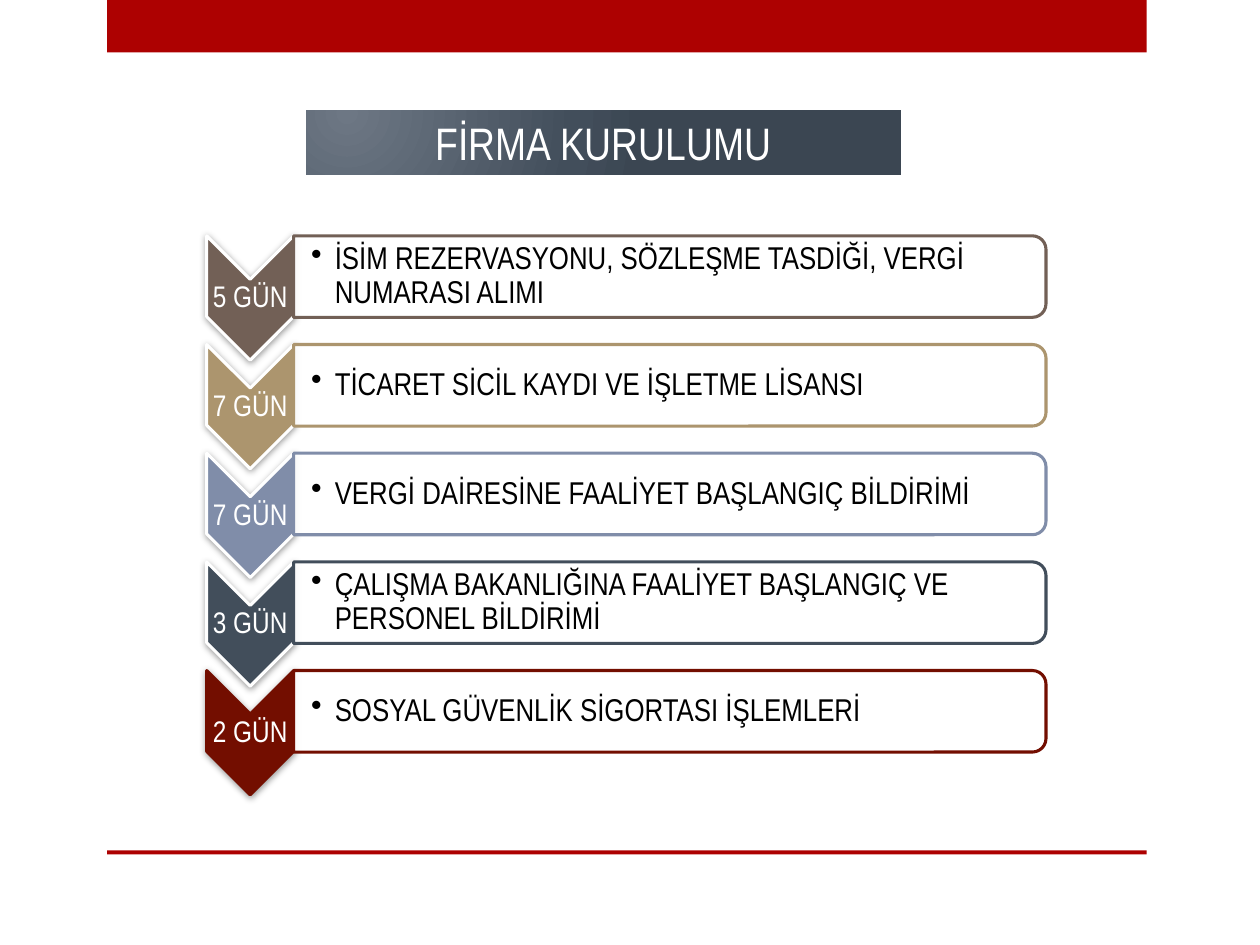
from dataclasses import dataclass

from lxml import etree
from pptx import Presentation
from pptx.dml.color import RGBColor
from pptx.enum.shapes import MSO_SHAPE
from pptx.enum.text import MSO_ANCHOR, PP_ALIGN
from pptx.oxml.ns import qn
from pptx.util import Pt

RECTANGLE = MSO_SHAPE.RECTANGLE
CHEVRON = MSO_SHAPE.CHEVRON
ROUNDED_TOP = MSO_SHAPE.ROUND_2_SAME_RECTANGLE
MIDDLE = MSO_ANCHOR.MIDDLE
LEFT, CENTER = PP_ALIGN.LEFT, PP_ALIGN.CENTER


@dataclass(frozen=True)
class Theme:
    font: str = "Arial Narrow"
    title_size: float = 26
    step_size: float = 18
    days_size: float = 17
    outline: float = 1.75
    title_outline: float = 1.25
    white: str = "FFFFFF"
    black: str = "000000"
    red: str = "AD0101"
    title_stops: tuple = ((0, "6D7784"), (76, "424E5B"), (100, "3B4652"))


THEME = Theme()

# Days, step, colour, chevron outline
STEPS = [
    ("5 GÜN", "İSİM REZERVASYONU, SÖZLEŞME TASDİĞİ, VERGİ NUMARASI ALIMI", "726056", THEME.white),
    ("7 GÜN", "TİCARET SİCİL KAYDI VE İŞLETME LİSANSI", "AC956E", THEME.white),
    ("7 GÜN", "VERGİ DAİRESİNE FAALİYET BAŞLANGIÇ BİLDİRİMİ", "808DA9", THEME.white),
    ("3 GÜN", "ÇALIŞMA BAKANLIĞINA FAALİYET BAŞLANGIÇ VE PERSONEL BİLDİRİMİ", "424E5B", THEME.white),
    ("2 GÜN", "SOSYAL GÜVENLİK SİGORTASI İŞLEMLERİ", "730E00", "730E00"),
]


def add_xml(parent, tag, **attributes):
    element = etree.SubElement(parent, qn(tag))
    for name, value in attributes.items():
        element.set(name, str(value))
    return element


def add_box(slide, kind, box, fill, line=None, line_width=0, turned=False):
    """Add a shape that covers box; a turned one is rotated by 90 degrees."""
    left, top, width, height = box
    if turned:
        left, top = left + (width - height) / 2, top + (height - width) / 2
        width, height = height, width
    shape = slide.shapes.add_shape(kind, Pt(left), Pt(top), Pt(width), Pt(height))
    shape.rotation = 90 if turned else 0
    shape.shadow.inherit = False
    shape.fill.solid()
    shape.fill.fore_color.rgb = RGBColor.from_string(fill)
    if line:
        shape.line.color.rgb = RGBColor.from_string(line)
        shape.line.width = Pt(line_width)
    else:
        shape.line.fill.background()
    return shape


def write(frame, text, size, color, alignment):
    frame.word_wrap = True
    frame.vertical_anchor = MIDDLE
    paragraph = frame.paragraphs[0]
    paragraph.alignment = alignment
    run = paragraph.add_run()
    run.text = text
    run.font.name = THEME.font
    run.font.size = Pt(size)
    run.font.color.rgb = RGBColor.from_string(color)
    return paragraph


def add_label(slide, box, text, size, color, alignment, inset_left=0.7):
    label = slide.shapes.add_textbox(*(Pt(length) for length in box))
    frame = label.text_frame
    frame.margin_left = Pt(inset_left)
    frame.margin_right = frame.margin_top = frame.margin_bottom = Pt(0.7)
    paragraph = write(frame, text, size, color, alignment)
    paragraph.line_spacing = 0.9
    return paragraph


def add_shadow(shape):
    effects = shape._element.spPr.find(qn("a:effectLst"))
    shadow = add_xml(effects, "a:outerShdw", blurRad=Pt(4), dist=Pt(1),
                     dir=88 * 60000, rotWithShape=0)
    color = add_xml(shadow, "a:srgbClr", val=THEME.black)
    add_xml(color, "a:alpha", val=40000)


def add_bars(slide, box):
    left, top, width, height = box
    add_box(slide, RECTANGLE, (left, top, width, 30), THEME.red)
    add_box(slide, RECTANGLE, (left, top + height - 2.2, width, 2.2), THEME.red)


def add_title(slide, box):
    title = add_box(slide, RECTANGLE, box, THEME.white, THEME.white, THEME.title_outline)
    # Radial gradient lit from the upper left
    properties = title._element.spPr
    gradient = etree.Element(qn("a:gradFill"), rotWithShape="1")
    stops = add_xml(gradient, "a:gsLst")
    for position, color in THEME.title_stops:
        stop = add_xml(stops, "a:gs", pos=position * 1000)
        add_xml(stop, "a:srgbClr", val=color)
    circle = add_xml(gradient, "a:path", path="circle")
    add_xml(circle, "a:fillToRect", l=15000, t=15000, r=100000, b=100000)
    properties.replace(properties.find(qn("a:solidFill")), gradient)
    write(title.text_frame, "FİRMA KURULUMU", THEME.title_size, THEME.white, CENTER)


def add_step(slide, box, days, step, color, chevron_line):
    left, top, width, height = box
    chevron_width, panel_height = 49.7, 46.6
    panel_left, panel_width = left + chevron_width, width - chevron_width

    # Chevron pointing down, with the number of days
    chevron = add_box(slide, CHEVRON, (left, top, chevron_width, height),
                      color, chevron_line, THEME.outline, turned=True)
    add_shadow(chevron)
    add_label(slide, (left, top + chevron_width / 2, chevron_width, height - chevron_width),
              days, THEME.days_size, THEME.white, CENTER)

    # Panel rounded on its right side, with the step
    panel = add_box(slide, ROUNDED_TOP, (panel_left, top, panel_width, panel_height),
                    THEME.white, color, THEME.outline, turned=True)
    fill_color = panel._element.spPr.find(qn("a:solidFill"))[0]
    add_xml(fill_color, "a:alpha", val=90000)
    paragraph = add_label(slide, (panel_left, top + 2.3, panel_width - 2.3, panel_height - 4.6),
                          step, THEME.step_size, THEME.black, LEFT, inset_left=10)
    properties = paragraph._p.get_or_add_pPr()
    properties.set("marL", str(Pt(13.5)))
    properties.set("indent", str(-Pt(13.5)))
    add_xml(properties, "a:buChar", char="•")


def add_steps(slide, box):
    left, top, width, height = box
    step_height = 71
    pitch = (height - step_height) / (len(STEPS) - 1)
    for index, step in enumerate(STEPS):
        add_step(slide, (left, top + index * pitch, width, step_height), *step)


def main():
    presentation = Presentation()
    presentation.slide_width, presentation.slide_height = Pt(720), Pt(540)
    slide = presentation.slides.add_slide(presentation.slide_layouts[6])
    add_bars(slide, (61.2, 0, 594, 488.2))
    add_steps(slide, (118.1, 134.8, 479.6, 319.4))
    add_title(slide, (174.5, 62.1, 341, 38.6))
    presentation.save("out.pptx")


if __name__ == "__main__":
    main()
